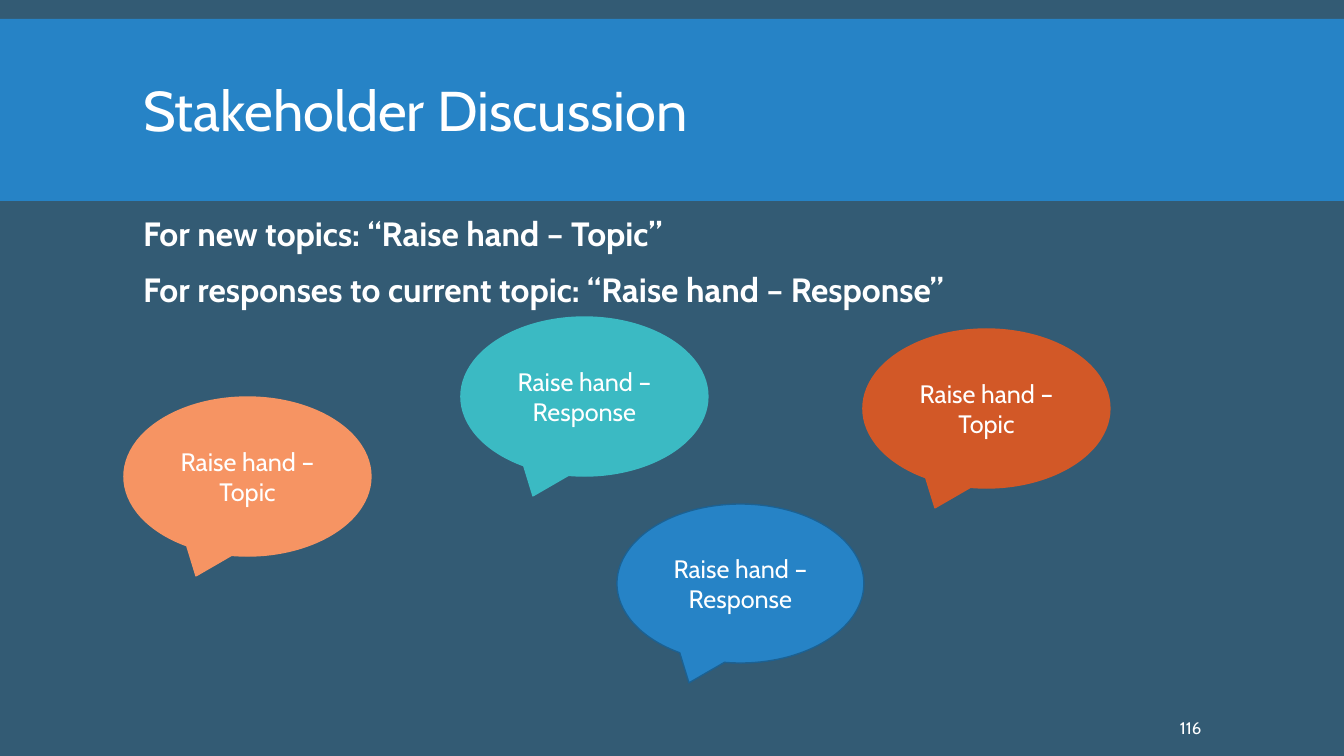
from dataclasses import dataclass

from pptx import Presentation
from pptx.dml.color import RGBColor
from pptx.enum.shapes import MSO_SHAPE
from pptx.enum.text import MSO_ANCHOR, MSO_AUTO_SIZE, PP_ALIGN
from pptx.oxml.ns import qn
from pptx.util import Emu, Pt

SLIDE_W, SLIDE_H = 1344, 756


@dataclass(frozen=True)
class Theme:
    font: str = "Cabin"
    background: str = "335B74"
    text: str = "FFFFFF"
    blue: str = "2683C6"
    blue_edge: str = "1C6192"
    peach: str = "F69463"
    teal: str = "3BBAC3"
    rust: str = "D25827"
    title_size: int = 40
    body_size: int = 24
    callout_size: int = 18
    number_size: int = 12


THEME = Theme()


def px(length):
    return Emu(round(length * 914400 / 100.8))


def rgb(colour):
    return RGBColor.from_string(colour)


def place(shape, box):
    shape.left, shape.top, shape.width, shape.height = map(px, box)


def style_text(frame, size, align=PP_ALIGN.LEFT, bold=False):
    frame.word_wrap = True
    frame.auto_size = MSO_AUTO_SIZE.NONE
    frame.vertical_anchor = MSO_ANCHOR.MIDDLE
    for paragraph in frame.paragraphs:
        paragraph.alignment = align
        for run in paragraph.runs:
            run.font.name = THEME.font
            run.font.size = Pt(size)
            run.font.bold = bold
            run.font.color.rgb = rgb(THEME.text)


def add_filled(slide, kind, box, fill):
    shape = slide.shapes.add_shape(kind, *map(px, box))
    shape.shadow.inherit = False
    shape.fill.solid()
    shape.fill.fore_color.rgb = rgb(fill)
    return shape


# Blue band with the slide title
def add_header(slide, box):
    left, top, width, height = box
    band = add_filled(slide, MSO_SHAPE.RECTANGLE, box, THEME.blue)
    band.line.fill.background()

    title = slide.shapes.title
    title._element.addprevious(band._element)  # band lies behind the title
    place(title, (left + 133, top + 12, width - 266, height - 16))
    title.text_frame.text = "Stakeholder Discussion"
    title.text_frame.paragraphs[0].line_spacing = 0.85
    style_text(title.text_frame, THEME.title_size)


# Instructions for raising a hand
def add_instructions(slide, box, lines):
    body = slide.placeholders[1]
    place(body, box)
    body.text_frame.text = "\n".join(lines)
    for index, paragraph in enumerate(body.text_frame.paragraphs):
        properties = paragraph._p.get_or_add_pPr()
        properties.set("marL", "0")
        properties.set("indent", "0")
        properties.append(properties.makeelement(qn("a:buNone"), {}))
        paragraph.line_spacing = 0.9
        paragraph.space_before = Pt(12 if index else 0)
        paragraph.space_after = Pt(2)
    style_text(body.text_frame, THEME.body_size, bold=True)


# Speech bubbles, each placed from the corner of the given box
def add_callouts(slide, box, callouts):
    left, top, width, height = box
    for dx, dy, kind, fill, edge in callouts:
        callout = add_filled(slide, MSO_SHAPE.OVAL_CALLOUT,
                             (left + dx, top + dy, width, height), fill)
        callout.line.color.rgb = rgb(edge)
        callout.line.width = Pt(1)
        callout.text_frame.text = f"Raise hand – {kind}"
        style_text(callout.text_frame, THEME.callout_size, PP_ALIGN.CENTER)


def add_page_number(slide, box, number):
    page_number = slide.shapes.add_textbox(*map(px, box))
    page_number.text_frame.text = str(number)
    page_number.text_frame.margin_left = px(5)
    style_text(page_number.text_frame, THEME.number_size)


def add_discussion_slide(presentation):
    slide = presentation.slides.add_slide(presentation.slide_layouts[1])
    slide.background.fill.solid()
    slide.background.fill.fore_color.rgb = rgb(THEME.background)

    add_header(slide, (0, 19, SLIDE_W, 182))
    add_instructions(slide, (133, 211, 1078, 106), [
        "For new topics: “Raise hand – Topic”",
        "For responses to current topic: “Raise hand – Response”",
    ])
    add_callouts(slide, (124, 317, 247, 159), [
        (0, 80, "Topic", THEME.peach, THEME.peach),
        (337, 0, "Response", THEME.teal, THEME.teal),
        (493, 187, "Response", THEME.blue, THEME.blue_edge),
        (739, 12, "Topic", THEME.rust, THEME.rust),
    ])
    add_page_number(slide, (1175, 708, 104, 40), 116)


def main():
    presentation = Presentation()
    presentation.slide_width = px(SLIDE_W)
    presentation.slide_height = px(SLIDE_H)
    add_discussion_slide(presentation)
    presentation.save("out.pptx")


if __name__ == "__main__":
    main()
